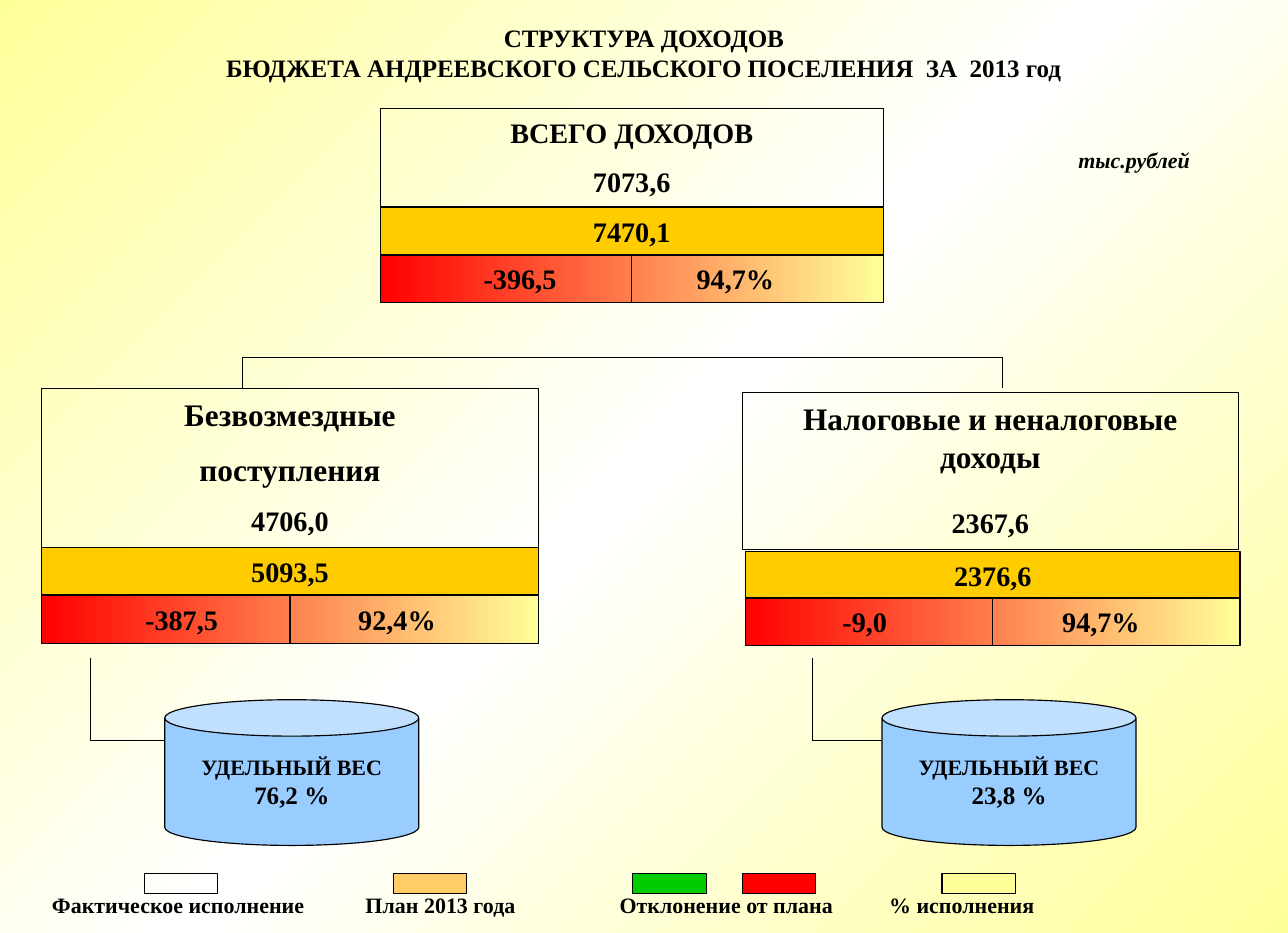
from lxml import etree
from pptx import Presentation
from pptx import util as u
from pptx.dml.color import RGBColor
from pptx.enum import shapes, text
from pptx.oxml import ns

COLORS = {
    "ink": "000000",
    "plan": "FFCC00",
    "plan_key": "FFCC66",
    "fall": "FF0000",
    "growth": "00CC00",
    "share": "99CCFF",
    "percent": "FFFF99",
    "white": "FFFFFF",
}
BAR_HEIGHT = 1.07


def write(frame, lines, size=18, italic=False, align="CENTER", anchor="TOP",
          wrap=True, gap=10, tabs=()):
    """Fill a frame; a line is a string or a tuple (string, size, gap)."""
    frame.word_wrap = wrap
    frame.vertical_anchor = getattr(text.MSO_ANCHOR, anchor)
    frame.margin_left = frame.margin_right = u.Cm(0.28)
    frame.margin_top = frame.margin_bottom = u.Cm(0.15)
    for i, line in enumerate(lines):
        words, points, before = line if isinstance(line, tuple) else (line, size, gap)
        paragraph = frame.add_paragraph() if i else frame.paragraphs[0]
        paragraph.text = words
        paragraph.alignment = getattr(text.PP_ALIGN, align)
        paragraph.space_before = u.Pt(before if i else 0)
        font = paragraph.font
        font.name, font.size = "Times New Roman", u.Pt(points)
        font.bold, font.italic = True, italic
        font.color.rgb = RGBColor.from_string(COLORS["ink"])
        if tabs:
            props = paragraph._p.get_or_add_pPr()
            stops = etree.Element(ns.qn("a:tabLst"))
            for position, kind in tabs:
                etree.SubElement(stops, ns.qn("a:tab"), pos=str(u.Cm(position)), algn=kind)
            props.find(ns.qn("a:defRPr")).addprevious(stops)


class Board:
    def __init__(self, slide):
        self.slide = slide
        self.line_width = u.Pt(0.75)

    def gradient(self, owner, fill, names, angle=0):
        fill.gradient()
        fill.gradient_angle = angle
        stops = owner.element.find(".//" + ns.qn("a:gsLst"))
        for stop in list(stops):
            stops.remove(stop)
        for i, name in enumerate(names):
            position = str(100000 * i // (len(names) - 1))
            stop = etree.SubElement(stops, ns.qn("a:gs"), pos=position)
            etree.SubElement(stop, ns.qn("a:srgbClr"), val=COLORS[name])

    def label(self, x, y, w, h, lines, **style):
        box = self.slide.shapes.add_textbox(u.Cm(x), u.Cm(y), u.Cm(w), u.Cm(h))
        write(box.text_frame, lines, **style)

    def shape(self, x, y, w, h, color=None, lines=(), kind="RECTANGLE", **style):
        shape = self.slide.shapes.add_shape(
            getattr(shapes.MSO_SHAPE, kind), u.Cm(x), u.Cm(y), u.Cm(w), u.Cm(h))
        shape.shadow.inherit = False
        shape.line.color.rgb = RGBColor.from_string(COLORS["ink"])
        shape.line.width = self.line_width
        if isinstance(color, tuple):
            self.gradient(shape, shape.fill, color)
        elif color:
            shape.fill.solid()
            shape.fill.fore_color.rgb = RGBColor.from_string(COLORS[color])
        else:
            shape.fill.background()
        write(shape.text_frame, lines, **style)

    def line(self, x1, y1, x2, y2):
        line = self.slide.shapes.add_connector(
            shapes.MSO_CONNECTOR.STRAIGHT, u.Cm(x1), u.Cm(y1), u.Cm(x2), u.Cm(y2))
        line.line.color.rgb = RGBColor.from_string(COLORS["ink"])
        line.line.width = self.line_width
        etree.SubElement(line.element.spPr, ns.qn("a:effectLst"))

    def bars(self, x, w, plan_y, plan, result_y, deviation, percent, deviation_tab):
        """Plan bar above a result bar split in two halves."""
        self.shape(x, plan_y, w, BAR_HEIGHT, "plan", [plan])
        self.shape(x, result_y, w, BAR_HEIGHT, ("fall", "percent"),
                   [f"\t{deviation}\t{percent}"], align="LEFT",
                   tabs=[(deviation_tab, "ctr"), (7.72, "ctr")])
        middle = x + w / 2
        self.line(middle, result_y, middle, result_y + BAR_HEIGHT)

    def share(self, x, branch_x, percent):
        """Cylinder with the elbow that leads to it."""
        self.line(branch_x, 14.81, branch_x, 16.66)
        self.line(branch_x, 16.66, x, 16.66)
        self.shape(x, 15.75, 5.72, 3.28, "share",
                   [("УДЕЛЬНЫЙ ВЕС", 14, 0), (percent, 16, 0)],
                   kind="CAN", anchor="MIDDLE", wrap=False)


def main():
    deck = Presentation()
    deck.slide_width, deck.slide_height = u.Cm(29), u.Cm(21)
    slide = deck.slides.add_slide(deck.slide_layouts[6])
    board = Board(slide)
    board.gradient(slide, slide.background.fill, ("percent", "white", "percent"), 315)

    # Heading and unit
    board.label(0, 0.36, 29, 1.65, [
        "СТРУКТУРА ДОХОДОВ\vБЮДЖЕТА АНДРЕЕВСКОГО СЕЛЬСКОГО ПОСЕЛЕНИЯ  ЗА  2013 год"], size=16)
    board.label(24, 3.15, 3.73, 0.94, ["тыс.рублей"], size=14, italic=True, align="LEFT")

    # Total income
    board.shape(8.56, 2.44, 11.33, 2.21, lines=["ВСЕГО ДОХОДОВ", "7073,6"])
    board.bars(8.56, 11.33, 4.67, "7470,1", 5.74, "-396,5", "94,7%", 2.87)

    # Branches to the two sources
    board.line(5.46, 8.05, 22.58, 8.05)
    for branch_x in (5.46, 22.58):
        board.line(branch_x, 8.05, branch_x, 8.74)

    # Grants
    board.shape(0.94, 8.74, 11.18, 3.58, lines=[
        ("Безвозмездные", 20, 0), ("поступления", 20, 11), "4706,0"])
    board.bars(0.94, 11.18, 12.32, "5093,5", 13.41, "-387,5", "92,4%", 2.87)
    board.share(3.71, 2.03, "76,2 %")

    # Tax and non-tax income
    board.shape(16.71, 8.84, 11.18, 3.53, lines=[
        ("Налоговые и неналоговые доходы", 20, 0), ("2367,6", 18, 19.5)])
    board.bars(16.79, 11.13, 12.42, "2376,6", 13.46, "-9,0", "94,7%", 2.4)
    board.share(19.86, 18.29, "23,8 %")

    # Legend
    for x, color in ((3.25, None), (8.86, "plan_key"), (14.25, "growth"),
                     (16.71, "fall"), (21.21, "percent")):
        board.shape(x, 19.66, 1.65, 0.46, color)
    board.label(0.41, 19.91, 27.23, 0.89, [
        "\tФактическое исполнение\tПлан 2013 года\tОтклонение от плана\t% исполнения"],
        size=14, align="LEFT", tabs=[(x, "l") for x in (0.48, 7.54, 13.26, 19.33)])

    deck.save("out.pptx")


if __name__ == "__main__":
    main()
